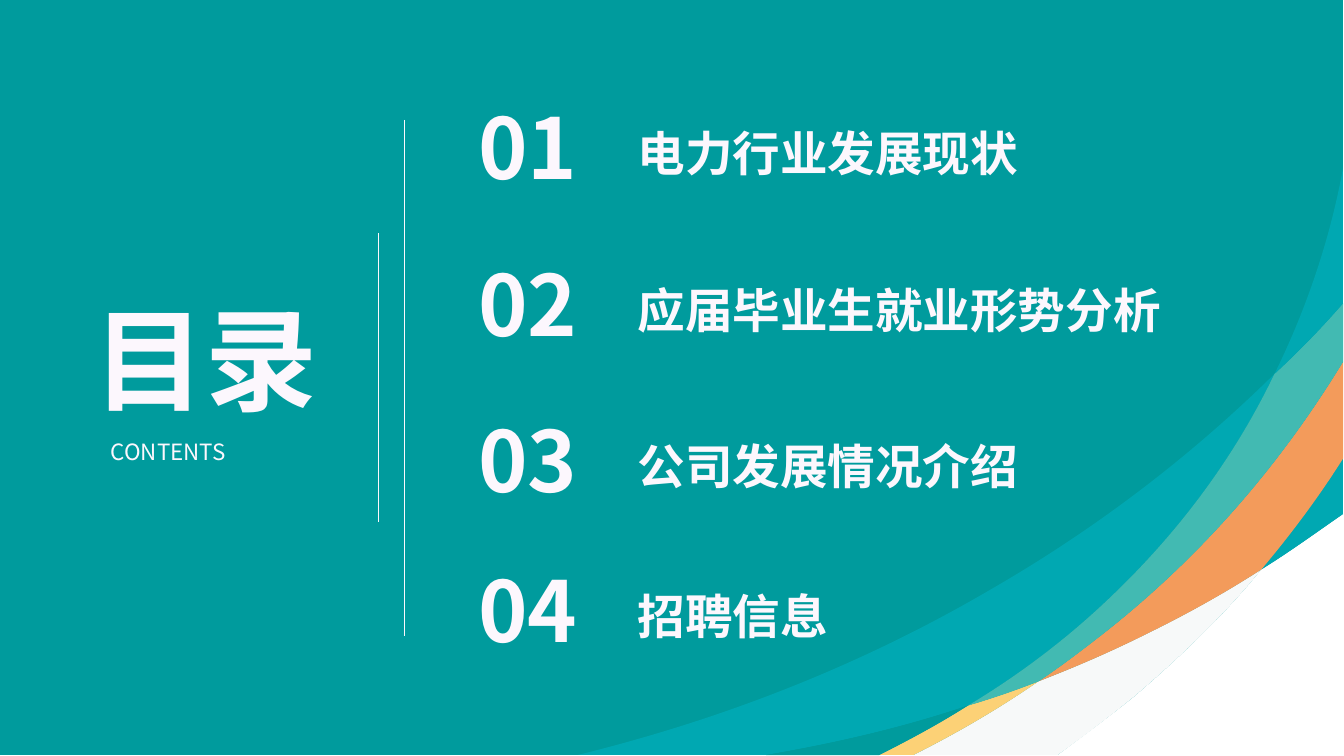
from pptx import Presentation
from pptx.dml.color import RGBColor
from pptx.enum.shapes import MSO_CONNECTOR, MSO_SHAPE
from pptx.enum.text import MSO_ANCHOR, MSO_AUTO_SIZE, PP_ALIGN
from pptx.oxml.ns import qn
from pptx.util import Inches, Pt
from lxml import etree

RECT, STRAIGHT = MSO_SHAPE.RECTANGLE, MSO_CONNECTOR.STRAIGHT
TOP, GROW = MSO_ANCHOR.TOP, MSO_AUTO_SIZE.SHAPE_TO_FIT_TEXT
LEFT, CENTER, JUSTIFY = PP_ALIGN.LEFT, PP_ALIGN.CENTER, PP_ALIGN.JUSTIFY
FONT = "Noto Sans CJK SC"
W, H = 13.33, 7.5
TEXT_INSET = 0.1
COLORS = {"teal": "009B9D", "cyan": "00A8B2", "mint": "42BAB2", "orange": "F39B5B",
          "yellow": "FCD176", "mist": "F7F9F9", "white": "FFFFFF", "text": "FCF7FD"}

# Each band: colour, start point, then lines (x, y) or cubic curves (6 numbers)
BANDS = [
    ("white", (13.32, 5.1), [(13.32, 7.49), (10.49, 7.49),
                             (10.73, 7.31, 10.99, 7.12, 11.25, 6.91),
                             (11.74, 6.49, 12.17, 6.07, 12.51, 5.65),
                             (12.8, 5.47, 13.06, 5.28, 13.32, 5.1)]),
    ("cyan", (13.32, 4.55), [(13.32, 5.1), (13.06, 5.28, 12.8, 5.47, 12.51, 5.65),
                             (12.83, 5.27, 13.1, 4.9, 13.32, 4.55)]),
    ("mist", (11.37, 6.29), [(11.78, 6.09, 12.17, 5.87, 12.51, 5.65),
                             (12.17, 6.07, 11.74, 6.49, 11.25, 6.91),
                             (10.99, 7.12, 10.74, 7.31, 10.49, 7.49), (9.06, 7.49),
                             (9.46, 7.29, 9.88, 7.05, 10.3, 6.76),
                             (10.66, 6.62, 11.01, 6.47, 11.37, 6.29)]),
    ("yellow", (9.6, 7), [(9.84, 6.93, 10.07, 6.85, 10.3, 6.76),
                          (9.88, 7.05, 9.46, 7.29, 9.06, 7.49), (8.72, 7.49),
                          (9, 7.35, 9.3, 7.19, 9.6, 7)]),
    ("orange", (13.32, 3.59), [(13.32, 4.55), (13.1, 4.9, 12.83, 5.27, 12.51, 5.65),
                               (12.17, 5.87, 11.78, 6.09, 11.37, 6.29),
                               (11.01, 6.47, 10.66, 6.62, 10.3, 6.76),
                               (10.54, 6.6, 10.76, 6.43, 10.99, 6.25),
                               (12.13, 5.34, 12.85, 4.36, 13.32, 3.59)]),
    ("cyan", (9.84, 5.84), [(11, 5.17, 11.92, 4.42, 12.64, 3.71),
                            (12.3, 4.42, 11.8, 5.16, 11.08, 5.86),
                            (10.6, 6.33, 10.1, 6.7, 9.6, 7),
                            (8.92, 7.23, 8.24, 7.38, 7.6, 7.49), (5.73, 7.49),
                            (6.99, 7.18, 8.41, 6.68, 9.84, 5.84)]),
    ("teal", (9.6, 7), [(9.3, 7.19, 9, 7.35, 8.72, 7.49), (7.6, 7.49),
                        (8.24, 7.38, 8.92, 7.23, 9.6, 7)]),
    ("mint", (13.32, 3.01), [(13.32, 3.59), (12.85, 4.36, 12.13, 5.34, 10.99, 6.25),
                             (10.76, 6.43, 10.54, 6.6, 10.3, 6.76),
                             (10.07, 6.85, 9.84, 6.93, 9.6, 7),
                             (10.1, 6.7, 10.6, 6.33, 11.08, 5.86),
                             (11.8, 5.16, 12.3, 4.42, 12.64, 3.71),
                             (12.9, 3.47, 13.12, 3.24, 13.32, 3.01)]),
    ("cyan", (13.32, 1.67), [(13.32, 3.01), (13.12, 3.24, 12.9, 3.47, 12.64, 3.71),
                             (13.02, 2.94, 13.22, 2.22, 13.32, 1.67)]),
]

# Agenda entries with the top and text width of each row
ENTRIES = [(0.9, 4.02, "电力行业发展现状"), (2.46, 5.65, "应届毕业生就业形势分析"),
           (4.0, 4.02, "公司发展情况介绍"), (5.49, 4.02, "招聘信息")]


def color(name):
    return RGBColor.from_string(COLORS[name])


def paint(sp, name):
    sp.fill.solid()
    sp.fill.fore_color.rgb = color(name)
    sp.line.fill.background()
    sp.shadow.inherit = False


def write(sp, text, size, bold=False, align=LEFT, spacing=1.0):
    tf = sp.text_frame
    tf.word_wrap, tf.auto_size, tf.vertical_anchor = True, GROW, TOP
    tf.margin_left = tf.margin_right = Inches(TEXT_INSET)
    tf.margin_top = tf.margin_bottom = Inches(TEXT_INSET / 2)
    p = tf.paragraphs[0]
    p.alignment, p.line_spacing, p.space_before = align, spacing, Pt(0)
    r = p.add_run()
    r.text = text
    r.font.size, r.font.bold, r.font.name = Pt(size), bold, FONT
    r.font.color.rgb = color("text")
    etree.SubElement(r.font._element, qn("a:ea")).set("typeface", FONT)


def add_text(slide, x, y, w, h, *args, **kwargs):
    sp = slide.shapes.add_textbox(Inches(x), Inches(y), Inches(w), Inches(h))
    write(sp, *args, **kwargs)


def draw_band(slide, name, start, segments):
    builder = slide.shapes.build_freeform(Inches(start[0]), Inches(start[1]))
    builder.add_line_segments([(Inches(s[-2]), Inches(s[-1])) for s in segments], close=True)
    sp = builder.convert_to_shape()
    paint(sp, name)
    # Bend the sides that have control points
    sides = list(sp._element.iter(qn("a:lnTo")))
    for side, seg in zip(sides, segments):
        if len(seg) == 6:
            curve = etree.Element(qn("a:cubicBezTo"))
            for x, y in zip(seg[::2], seg[1::2]):
                pt = etree.SubElement(curve, qn("a:pt"))
                pt.set("x", str(Inches(x) - sp.left))
                pt.set("y", str(Inches(y) - sp.top))
            side.getparent().replace(side, curve)


def draw_background(slide, x, y, w, h):
    sp = slide.shapes.add_shape(RECT, Inches(x), Inches(y), Inches(w), Inches(h))
    paint(sp, "teal")
    for band in BANDS:
        draw_band(slide, *band)


def draw_heading(slide, x, y, w, h):
    title = slide.shapes.title
    slide.shapes._spTree.append(title._element)  # bring in front of the background
    title.left, title.top = Inches(x), Inches(y)
    title.width, title.height = Inches(w), Inches(h * 0.79)
    write(title, "目录", 80, bold=True, align=CENTER)
    add_text(slide, x + w * 0.1, y + h * 0.8, w * 0.8, h * 0.2, "CONTENTS", 16, align=JUSTIFY)


def draw_dividers(slide, x, y, w, h):
    inset = h * 0.22
    for line_x, gap in ((x + w, 0), (x, inset)):
        line = slide.shapes.add_connector(STRAIGHT, Inches(line_x), Inches(y + gap),
                                          Inches(line_x), Inches(y + h - gap))
        line.line.color.rgb = color("text")
        line.line.width = Pt(0.5)
        etree.SubElement(line._element.spPr, qn("a:effectLst"))


def draw_agenda(slide, x, w):
    number_w, text_x = w * 0.178, w * 0.225
    for i, (top, text_w, entry) in enumerate(ENTRIES, 1):
        add_text(slide, x, top, number_w, 1.11, f"{i:02d}", 60, bold=True, align=CENTER)
        add_text(slide, x + text_x, top, text_w, 0.96, entry, 34, bold=True, spacing=1.5)


def main():
    prs = Presentation()
    prs.slide_width, prs.slide_height = Inches(W), Inches(H)
    slide = prs.slides.add_slide(prs.slide_layouts[5])
    draw_background(slide, -0.01, -0.01, W, H)
    draw_heading(slide, 0.74, 2.83, 2.6, 1.84)
    draw_dividers(slide, 3.75, 1.19, 0.26, 5.12)
    draw_agenda(slide, 4.585, 7.29)
    prs.save("out.pptx")


if __name__ == "__main__":
    main()
